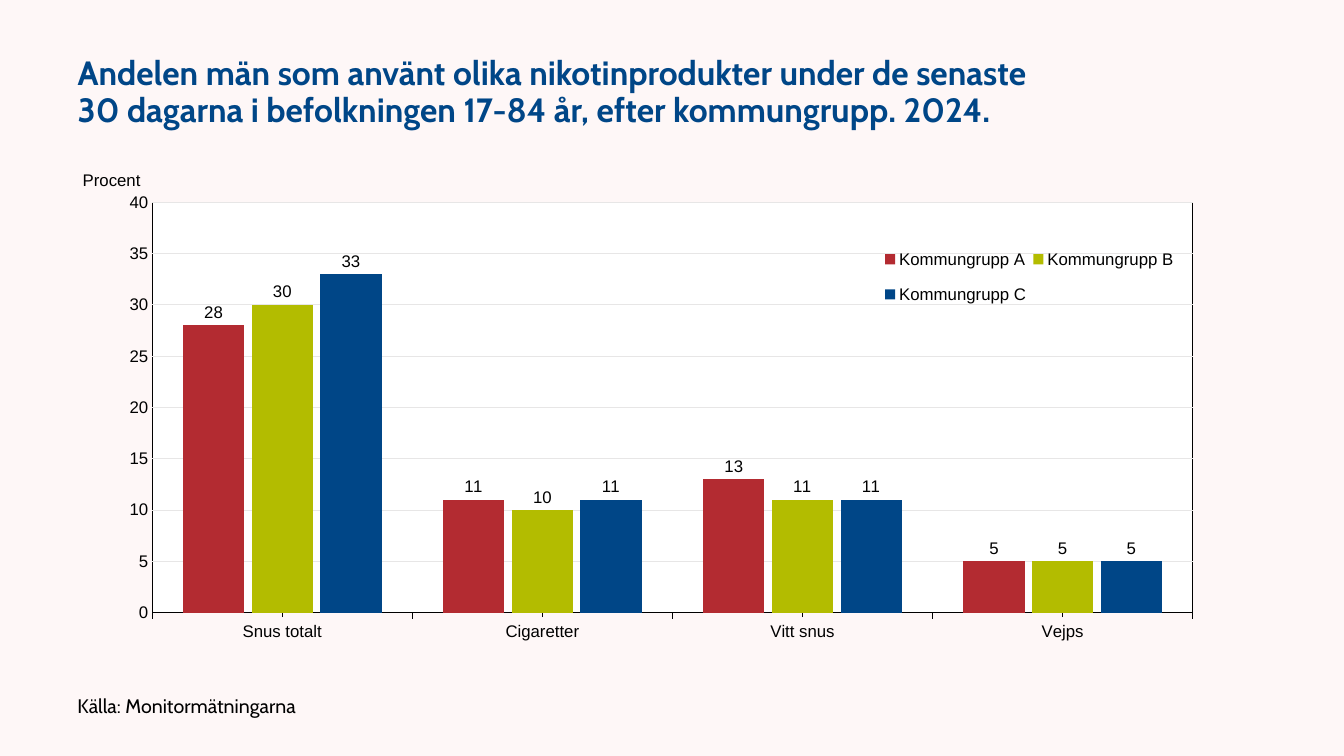
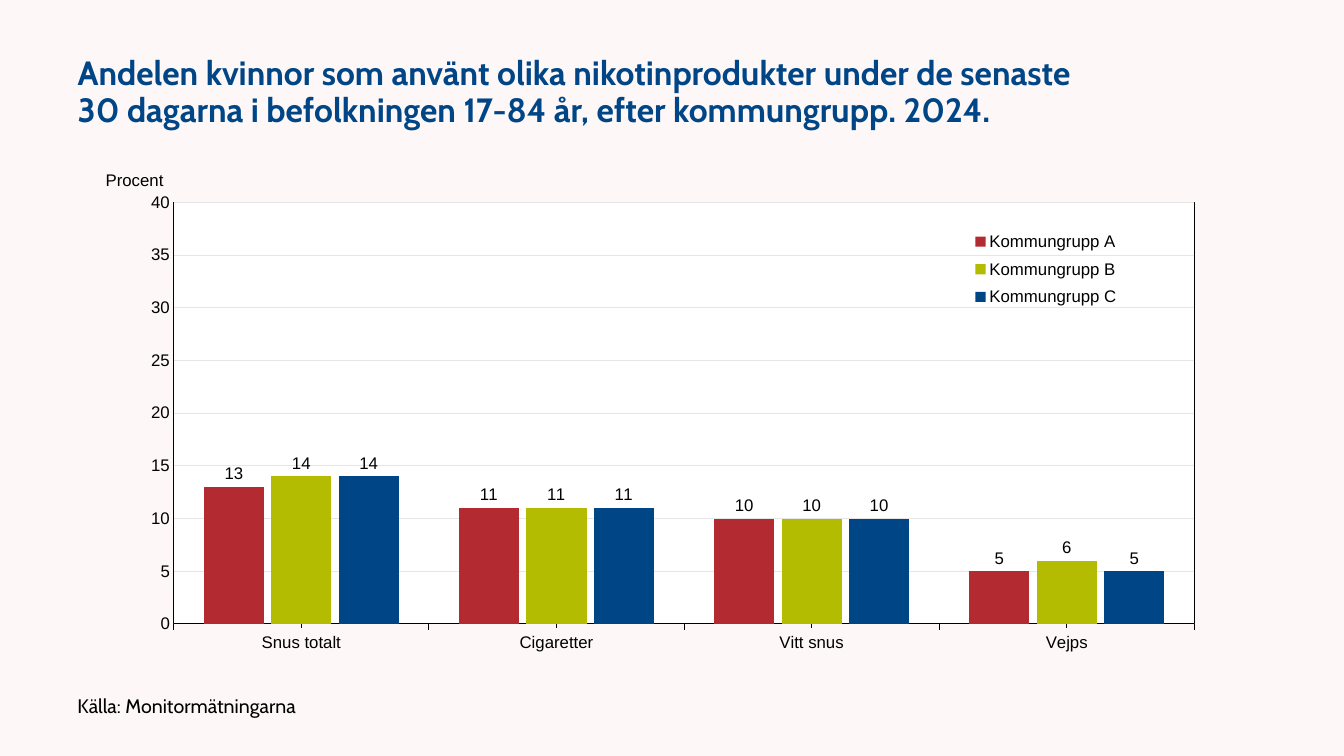
"""Build two slides on nicotine use among men and women by municipal group."""
from pptx import Presentation
from pptx.chart.data import CategoryChartData
from pptx.dml.color import RGBColor
from pptx.enum.chart import XL_CHART_TYPE, XL_LABEL_POSITION, XL_LEGEND_POSITION, XL_TICK_MARK
from pptx.enum.text import MSO_ANCHOR, PP_ALIGN
from pptx.oxml import parse_xml
from pptx.oxml.ns import nsdecls
from pptx.util import Inches, Pt

HUES = {"back": "FEF7F7", "title": "004687", "ink": "000000", "grid": "E7E6E6", "plot": "FFFFFF"}
FONTS = {
    "title": {"name": "Cabin", "size": Pt(24), "bold": True},
    "source": {"name": "Cabin", "size": Pt(14), "bold": False},
    "chart": {"name": "Arial", "size": Pt(12), "bold": False},
}
GROUPS = {"Kommungrupp A": "B32B31", "Kommungrupp B": "B3BC00", "Kommungrupp C": "004687"}
KINDS = ["Snus totalt", "Cigaretter", "Vitt snus", "Vejps"]
SLIDES = [
    {
        "who": "män",
        "box": (0.67, 1.55, 12, 5.09),
        "plot": (0.07, 0.09, 0.86, 0.8),
        "legend": (0.67, 0.15, 0.25, 0.17),
        "rows": [(28, 11, 13, 5), (30, 10, 11, 5), (33, 11, 11, 5)],
    },
    {
        "who": "kvinnor",
        "box": (0.9, 1.55, 11.77, 5.1),
        "plot": (0.07, 0.09, 0.86, 0.82),
        "legend": (0.73, 0.13, 0.15, 0.18),
        "rows": [(13, 11, 10, 5), (14, 11, 10, 6), (14, 11, 10, 5)],
    },
]


def style(font, kind, hue):
    for key, value in FONTS[kind].items():
        setattr(font, key, value)
    font.color.rgb = RGBColor.from_string(HUES[hue])


def place(node, spot, **marks):
    for old in node.xpath("c:layout"):
        node.remove(old)
    tags = "".join(f'<c:{tag} val="{value}"/>' for tag, value in marks.items())
    node.insert(spot, parse_xml(
        f'<c:layout {nsdecls("c")}><c:manualLayout>{tags}</c:manualLayout></c:layout>'))


deck = Presentation()
deck.slide_width, deck.slide_height = Inches(13.33), Inches(7.5)
fill = deck.slide_master.background.fill
fill.solid()
fill.fore_color.rgb = RGBColor.from_string(HUES["back"])

for item in SLIDES:
    slide = deck.slides.add_slide(deck.slide_layouts[5])
    title = slide.shapes.title
    title.left, title.top, title.width, title.height = map(Inches, (0.67, 0.3, 12, 1.25))
    source = slide.shapes.add_textbox(*map(Inches, (0.67, 6.83, 6, 0.37)))
    texts = [
        (title, "title", "title",
         f"Andelen {item['who']} som använt olika nikotinprodukter under de senaste\v"
         "30 dagarna i befolkningen 17-84 år, efter kommungrupp. 2024."),
        (source, "source", "ink", "Källa: Monitormätningarna"),
    ]
    for shape, kind, hue, words in texts:
        frame = shape.text_frame
        frame.text = words
        frame.word_wrap = True
        frame.vertical_anchor = MSO_ANCHOR.MIDDLE
        para = frame.paragraphs[0]
        para.alignment = PP_ALIGN.LEFT
        para.line_spacing = 0.9
        style(para.font, kind, hue)

    data = CategoryChartData(number_format="#,##0")
    data.categories = KINDS
    for name, row in zip(GROUPS, item["rows"]):
        data.add_series(name, row)
    chart = slide.shapes.add_chart(
        XL_CHART_TYPE.COLUMN_CLUSTERED, *map(Inches, item["box"]), data).chart
    chart.has_title = False
    style(chart.font, "chart", "ink")

    bars = chart.plots[0]
    bars.gap_width, bars.overlap, bars.vary_by_categories = 100, -12, False
    for series, hue in zip(bars.series, GROUPS.values()):
        series.format.fill.solid()
        series.format.fill.fore_color.rgb = RGBColor.from_string(hue)
        labels = series.data_labels
        labels.show_value = True
        labels.position = XL_LABEL_POSITION.OUTSIDE_END
        labels.number_format, labels.number_format_is_linked = "#,##0", False
        style(labels.font, "chart", "ink")

    base, scale = chart.category_axis, chart.value_axis
    base.major_tick_mark = base.minor_tick_mark = XL_TICK_MARK.OUTSIDE
    scale.major_tick_mark = scale.minor_tick_mark = XL_TICK_MARK.NONE
    scale.minimum_scale, scale.maximum_scale, scale.major_unit = 0, 40, 5
    scale.tick_labels.number_format = "#,##0"
    scale.tick_labels.number_format_is_linked = False
    scale.format.line.fill.background()
    for line, hue in ((base.format.line, "ink"), (scale.major_gridlines.format.line, "grid")):
        line.width = Pt(0.75)
        line.color.rgb = RGBColor.from_string(HUES[hue])
    unit = base.axis_title.text_frame
    unit.text = "Procent"
    style(unit.paragraphs[0].runs[0].font, "chart", "ink")

    chart.has_legend = True
    chart.legend.position = XL_LEGEND_POSITION.BOTTOM
    chart.legend.include_in_layout = False
    style(chart.legend.font, "chart", "ink")

    area = chart.element.xpath("//c:plotArea")[0]
    area.append(parse_xml(
        f'<c:spPr {nsdecls("c", "a")}>'
        f'<a:solidFill><a:srgbClr val="{HUES["plot"]}"/></a:solidFill>'
        f'<a:ln w="{Pt(0.75)}"><a:solidFill><a:srgbClr val="{HUES["ink"]}"/></a:solidFill></a:ln>'
        '</c:spPr>'))
    key = chart.element.xpath("//c:legend")[0]
    for node, spot, inner, box in ((area, 0, {"layoutTarget": "inner"}, item["plot"]),
                                   (key, 1, {}, item["legend"])):
        sides = dict(zip("xywh", box))
        place(node, spot, **inner, xMode="edge", yMode="edge", **sides)
    head = chart.element.xpath("//c:catAx/c:title")[0]
    place(head, 1, xMode="edge", yMode="edge", x=0.01, y=0.02)

deck.save("out.pptx")
